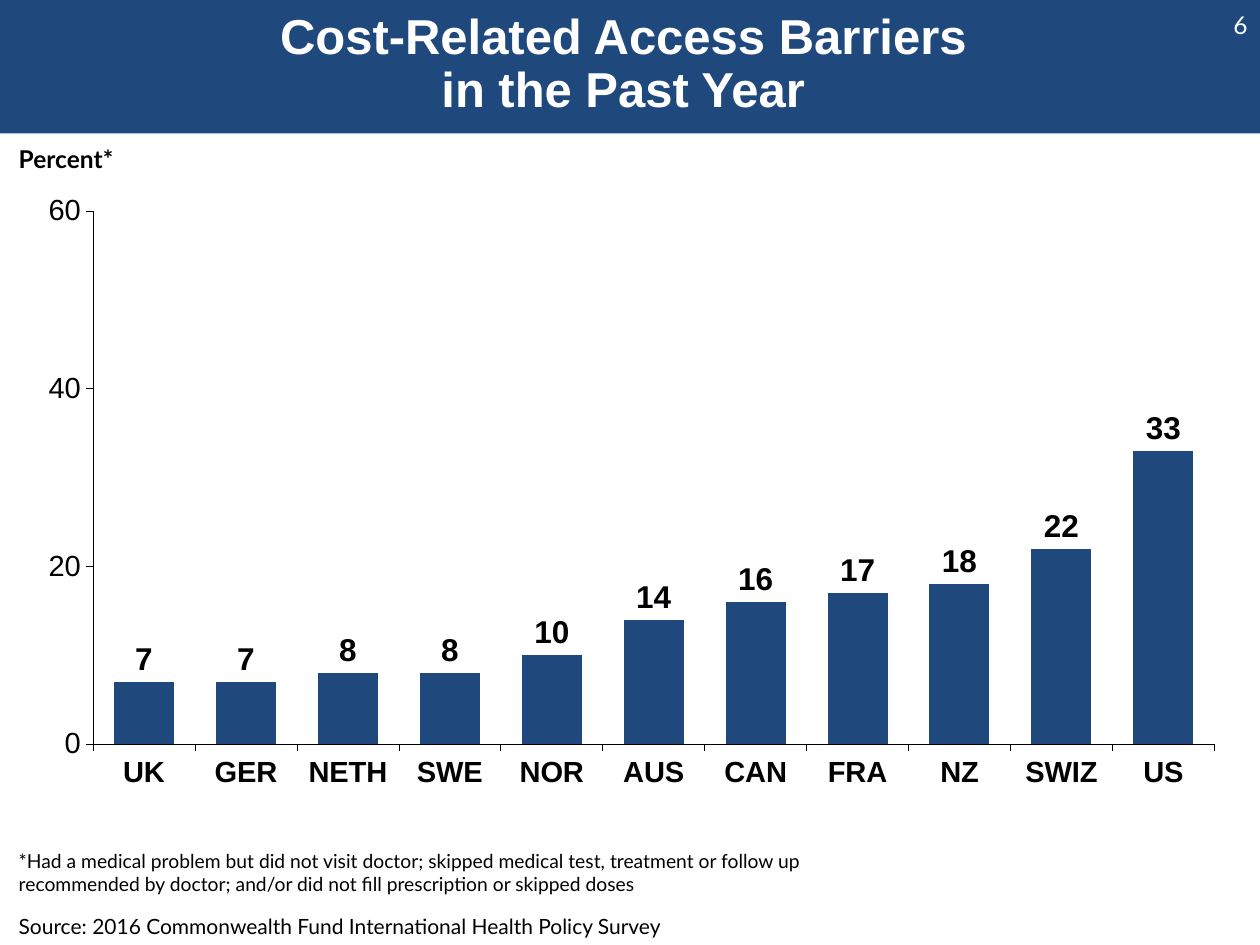
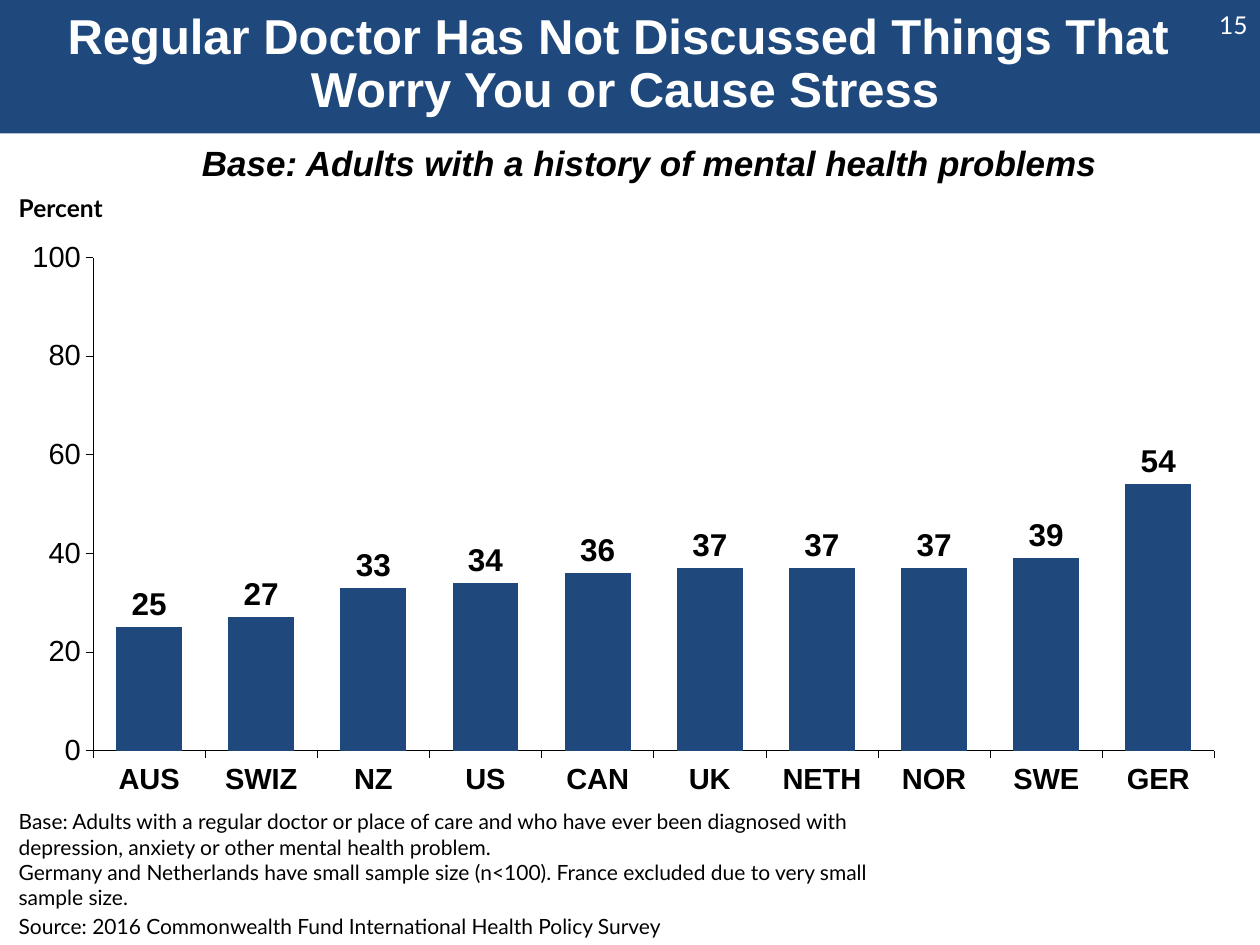
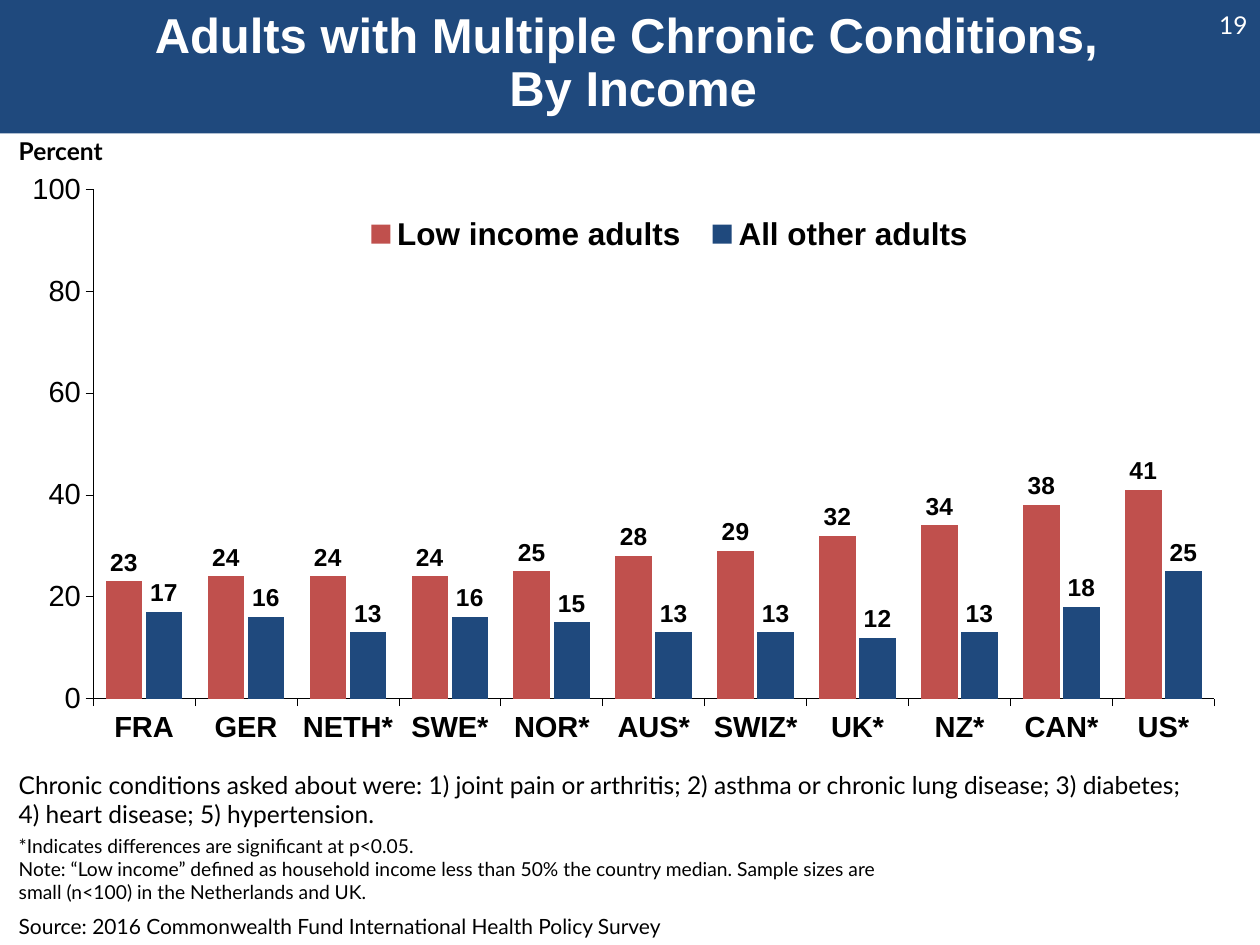
from lxml import etree
from pptx import Presentation
from pptx.chart.data import CategoryChartData
from pptx.dml.color import RGBColor
from pptx.enum import chart as charts, shapes, text
from pptx.oxml.ns import qn
from pptx.util import Inches, Pt

NAVY, RED, BLACK, WHITE = "1F497D", "C0504D", "000000", "FFFFFF"
HEADING, BODY = "Arial", "Lato"
SOURCE = "Source: 2016 Commonwealth Fund International Health Policy Survey"
PLOT_AREA = (0.054, 0.053, 0.947, 0.817)
LEGEND_AREA = (0.27, 0.075, 0.54, 0.1)

SLIDES = [
    {
        "number": "6",
        "title": "Cost-Related Access Barriers \vin the Past Year ",
        "title_at": (0.69, 0.15, 8.62, 0.74),
        "unit": ("Percent*", 1.09),
        "chart_at": (0.24, 1.4, 9.4, 5.18),
        "top_value": 60,
        "label_size": 18,
        "countries": ["UK", "GER", "NETH", "SWE", "NOR", "AUS", "CAN", "FRA", "NZ", "SWIZ", "US"],
        "series": [("Series 1", NAVY, [7, 7, 8, 8, 10, 14, 16, 17, 18, 22, 33])],
        "notes": [
            ((0.05, 6.69, 7.19, 0.47), 11, [
                "*Had a medical problem but did not visit doctor; skipped medical test, treatment "
                "or follow up recommended by doctor; and/or did not fill prescription or skipped doses"]),
        ],
    },
    {
        "number": "15",
        "title": "Regular Doctor Has Not Discussed Things That \vWorry You or Cause Stress",
        "title_at": (-0.08, 0.15, 10.08, 0.74),
        "subtitle": "Base: Adults with a history of mental health problems",
        "unit": ("Percent", 1.48),
        "chart_at": (0.24, 1.79, 9.4, 4.79),
        "top_value": 100,
        "label_size": 18,
        "countries": ["AUS", "SWIZ", "NZ", "US", "CAN", "UK", "NETH", "NOR", "SWE", "GER"],
        "series": [("Series 1", NAVY, [25, 27, 33, 34, 36, 37, 37, 37, 39, 54])],
        "notes": [
            ((0.05, 6.37, 7.04, 0.91), 12, [
                "Base: Adults with a regular doctor or place of care and who have ever been "
                "diagnosed with depression, anxiety or other mental health problem.",
                "Germany and Netherlands have small sample size (n<100). France excluded due to "
                "very small sample size."]),
        ],
    },
    {
        "number": "19",
        "title": "Adults with Multiple Chronic Conditions, \vBy Income",
        "title_at": (0.05, 0.14, 9.95, 0.74),
        "unit": ("Percent", 1.03),
        "chart_at": (0.24, 1.24, 9.4, 4.95),
        "top_value": 100,
        "label_size": 14,
        "countries": ["FRA", "GER", "NETH*", "SWE*", "NOR*", "AUS*", "SWIZ*", "UK*", "NZ*", "CAN*", "US*"],
        "series": [
            ("Low income adults", RED, [23, 24, 24, 24, 25, 28, 29, 32, 34, 38, 41]),
            ("All other adults", NAVY, [17, 16, 13, 16, 15, 13, 13, 12, 13, 18, 25]),
        ],
        "notes": [
            ((0.05, 6.57, 7.19, 0.66), 11, [
                "*Indicates differences are significant at p<0.05.",
                "Note: “Low income” defined as household income less than 50% the country median. "
                "Sample sizes are small (n<100) in the Netherlands and UK."]),
            ((0.05, 6.06, 9.74, 0.57), 14, [
                "Chronic conditions asked about were: 1) joint pain or arthritis; 2) asthma or "
                "chronic lung disease; 3) diabetes;",
                "4) heart disease; 5) hypertension."]),
        ],
    },
]


def rgb(value):
    return RGBColor.from_string(value)


def inches(box):
    return [Inches(length) for length in box]


def style(font, size, name=BODY, color=BLACK, bold=False, italic=False):
    font.size, font.name, font.bold, font.italic = Pt(size), name, bold, italic
    font.color.rgb = rgb(color)


def add_text(slide, box, lines, size, align=text.PP_ALIGN.LEFT,
             anchor=text.MSO_ANCHOR.TOP, **look):
    frame = slide.shapes.add_textbox(*inches(box)).text_frame
    frame.word_wrap = True
    frame.vertical_anchor = anchor
    frame.text = "\n".join(lines)
    for paragraph in frame.paragraphs:
        paragraph.alignment = align
        style(paragraph.font, size, **look)


def add_band_to_layout(slide):
    band = slide.shapes.add_shape(shapes.MSO_SHAPE.RECTANGLE, *inches((0, 0, 10, 1.06)))
    band.shadow.inherit = False
    band.fill.solid()
    band.fill.fore_color.rgb = rgb(NAVY)
    band.line.fill.background()
    slide.slide_layout.shapes._spTree.insert(2, band._element)


def fill_title(slide, words, box):
    title = slide.shapes.title
    title.left, title.top, title.width, title.height = inches(box)
    frame = title.text_frame
    frame.text = words
    frame.word_wrap = True
    frame.auto_size = text.MSO_AUTO_SIZE.NONE
    frame.vertical_anchor = text.MSO_ANCHOR.MIDDLE
    heading = frame.paragraphs[0]
    heading.alignment = text.PP_ALIGN.CENTER
    heading.line_spacing = 0.9
    style(heading.font, 28, HEADING, WHITE, bold=True)


def place_part(part, index, area, inner=False):
    for old in part.findall(qn("c:layout")):
        part.remove(old)
    layout = etree.Element(qn("c:layout"))
    manual = etree.SubElement(layout, qn("c:manualLayout"))
    settings = [("layoutTarget", "inner")] if inner else []
    settings += [("xMode", "edge"), ("yMode", "edge"), *zip("xywh", area)]
    for tag, value in settings:
        etree.SubElement(manual, qn(f"c:{tag}")).set("val", str(value))
    part.insert(index, layout)


def style_axis(axis, bold):
    axis.has_major_gridlines = False
    axis.major_tick_mark = charts.XL_TICK_MARK.OUTSIDE
    axis.minor_tick_mark = charts.XL_TICK_MARK.NONE
    axis.format.line.color.rgb = rgb(BLACK)
    axis.format.line.width = Pt(0.3)
    style(axis.tick_labels.font, 16.6, HEADING, bold=bold)


def add_columns(slide, content):
    data = CategoryChartData(number_format="0")
    data.categories = content["countries"]
    for name, _, values in content["series"]:
        data.add_series(name, values)
    chart = slide.shapes.add_chart(charts.XL_CHART_TYPE.COLUMN_CLUSTERED,
                                   *inches(content["chart_at"]), data).chart
    chart.has_title = False
    style(chart.font, 11, HEADING)

    style_axis(chart.category_axis, bold=True)
    percent = chart.value_axis
    style_axis(percent, bold=False)
    percent.minimum_scale, percent.maximum_scale = 0, content["top_value"]
    percent.major_unit = 20
    percent.tick_labels.number_format = "0"
    percent.tick_labels.number_format_is_linked = False

    plot = chart.plots[0]
    plot.gap_width, plot.overlap = 70, -10
    plot.vary_by_categories = False
    plot.has_data_labels = True
    labels = plot.data_labels
    labels.show_value = True
    labels.number_format = "0"
    labels.number_format_is_linked = False
    labels.position = charts.XL_LABEL_POSITION.OUTSIDE_END
    style(labels.font, content["label_size"], HEADING, bold=True)
    for series, (_, color, _) in zip(plot.series, content["series"]):
        series.invert_if_negative = False
        series.format.fill.solid()
        series.format.fill.fore_color.rgb = rgb(color)

    place_part(chart._chartSpace.chart.plotArea, 0, PLOT_AREA, inner=True)
    chart.has_legend = len(content["series"]) > 1
    if chart.has_legend:
        legend = chart.legend
        legend.position = charts.XL_LEGEND_POSITION.TOP
        legend.include_in_layout = False
        style(legend.font, 18, HEADING, bold=True)
        place_part(legend._element, 1, LEGEND_AREA)


def main():
    deck = Presentation()
    deck.slide_width, deck.slide_height = Inches(10), Inches(7.5)
    title_only = deck.slide_layouts[5]
    for content in SLIDES:
        slide = deck.slides.add_slide(title_only)
        if len(deck.slides) == 1:
            add_band_to_layout(slide)
        fill_title(slide, content["title"], content["title_at"])
        add_text(slide, (7.67, 0, 2.33, 0.4), [content["number"]], 14,
                 text.PP_ALIGN.RIGHT, text.MSO_ANCHOR.MIDDLE, color=WHITE)
        add_columns(slide, content)
        add_text(slide, (0.05, 7.2, 8.13, 0.3), [SOURCE], 12)
        unit, unit_top = content["unit"]
        add_text(slide, (0.05, unit_top, 1.19, 0.34), [unit], 14, bold=True)
        for box, size, lines in content["notes"]:
            add_text(slide, box, lines, size)
        if "subtitle" in content:
            add_text(slide, (1.17, 1.07, 7.97, 0.44), [content["subtitle"]], 20,
                     text.PP_ALIGN.CENTER, name=HEADING, bold=True, italic=True)
    deck.save("out.pptx")


if __name__ == "__main__":
    main()
